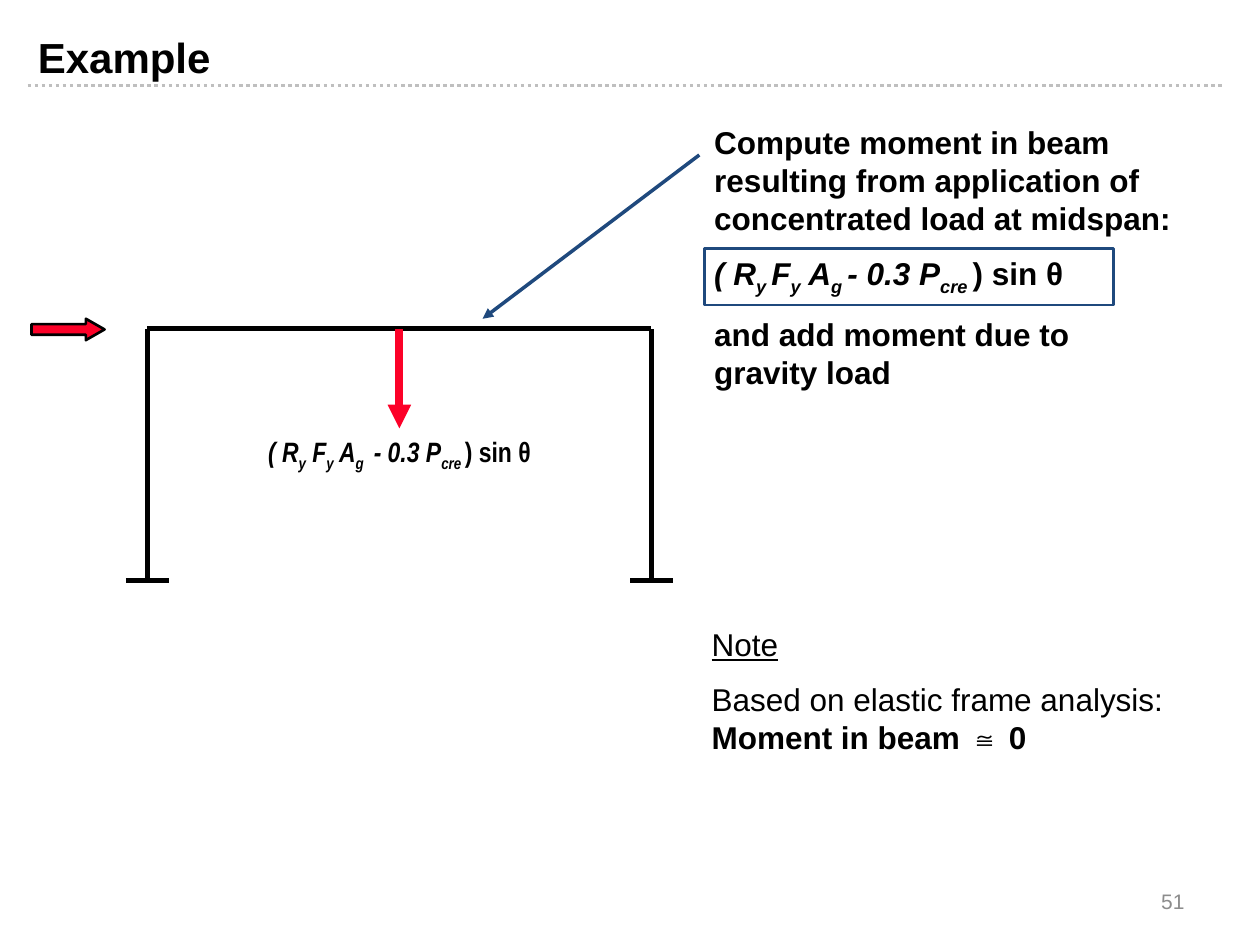
from dataclasses import dataclass

from pptx import Presentation
from pptx.dml.color import RGBColor
from pptx.enum import dml, shapes, text
from pptx.oxml import ns, xmlchemy
from pptx.util import Inches, Pt


@dataclass(frozen=True)
class Theme:
    """Colours, fonts and type sizes of the slide."""
    ink: RGBColor = RGBColor(0, 0, 0)
    load: RGBColor = RGBColor(0xFC, 0x01, 0x28)
    accent: RGBColor = RGBColor(0x1F, 0x49, 0x7D)
    rule: RGBColor = RGBColor(0xBF, 0xBF, 0xBF)
    page: RGBColor = RGBColor(0x8C, 0x8C, 0x8C)
    font: str = "Arial"
    narrow: str = "Arial Narrow"
    title: Pt = Pt(24)
    body: Pt = Pt(18)
    label: Pt = Pt(16)
    footer: Pt = Pt(12)
    gap: Pt = Pt(10)


THEME = Theme()


def style(paragraph, size, bold=None, name=THEME.font, color=THEME.ink):
    """Set the font shared by all runs of a paragraph."""
    font = paragraph.font
    font.size, font.bold, font.name = size, bold, name
    font.color.rgb = color


def add_line(slide, start, end, color, width, arrow=False):
    """Draw a straight line between two points given in inches."""
    line = slide.shapes.add_connector(
        shapes.MSO_CONNECTOR.STRAIGHT, *map(Inches, start + end))
    line.line.color.rgb = color
    line.line.width = Pt(width)
    if arrow:
        tail = xmlchemy.OxmlElement("a:tailEnd")
        tail.set("type", "triangle")
        line.line._get_or_add_ln().append(tail)
    line._element.find(ns.qn("p:spPr")).append(xmlchemy.OxmlElement("a:effectLst"))
    return line


def add_preset(slide, preset, box, line_color, fill=None):
    """Add an outlined preset shape, filled or hollow."""
    shape = slide.shapes.add_shape(preset, *map(Inches, box))
    shape.shadow.inherit = False
    shape.line.color.rgb = line_color
    shape.line.width = Pt(1.5)
    if fill is None:
        shape.fill.background()
    else:
        shape.fill.solid()
        shape.fill.fore_color.rgb = fill
    return shape


def add_text(slide, box):
    """Add a wrapping text box and return its frame."""
    frame = slide.shapes.add_textbox(*map(Inches, box)).text_frame
    frame.word_wrap = True
    return frame


def write_force(paragraph, parts):
    """Write the unbalanced force from alternating base and subscript parts."""
    for index, part in enumerate(parts):
        run = paragraph.add_run()
        run.text = part
        run.font.italic = True
        if index % 2:
            run._r.get_or_add_rPr().set("baseline", "-25000")
    run.font.italic = False


def add_heading(slide, left, top, width, height):
    """Place the title and the dotted rule beneath it."""
    title = slide.shapes.title
    title.left, title.top, title.width, title.height = map(
        Inches, (left, top, width, height))
    frame = title.text_frame
    frame.text = "Example"
    frame.vertical_anchor = text.MSO_ANCHOR.TOP
    frame.paragraphs[0].alignment = text.PP_ALIGN.LEFT
    style(frame.paragraphs[0], THEME.title, True)
    rule = add_line(slide, (0.22, 0.68), (9.72, 0.68), THEME.rule, 2)
    rule.line.dash_style = dml.MSO_LINE.ROUND_DOT


def add_frame(slide, left, top, width, height):
    """Draw the portal frame with its supports, loads and load label."""
    right, base, middle = left + width, top + height, left + width / 2
    add_preset(slide, shapes.MSO_SHAPE.RIGHT_ARROW,
               (left - 0.92, top - 0.08, 0.58, 0.17), THEME.ink, THEME.load
               ).adjustments[1] = 0.875
    for column in (left, right):
        add_line(slide, (column, base), (column, top), THEME.ink, 3)
        add_line(slide, (column - 0.17, base), (column + 0.17, base), THEME.ink, 3)
    add_line(slide, (left, top), (right, top), THEME.ink, 3)
    add_line(slide, (middle, top), (middle, top + 0.79), THEME.load, 4.5, arrow=True)

    label = add_text(slide, (middle - 1.46, top + 0.79, 2.92, 0.37)).paragraphs[0]
    label.alignment = text.PP_ALIGN.CENTER
    style(label, THEME.label, True, THEME.narrow)
    write_force(label, ["( R", "y", " F", "y", " A", "g ", " - 0.3 P", "cre ", ") sin θ"])


def add_moment_steps(slide, left, top, width, height):
    """Explain the beam moment, with its boxed force and pointer."""
    frame = add_text(slide, (left, top, width, height))
    intro, force, gravity = (
        frame.paragraphs[0], frame.add_paragraph(), frame.add_paragraph())
    for paragraph in (intro, force, gravity):
        style(paragraph, THEME.body, True)
    for paragraph in (force, gravity):
        paragraph.space_before = THEME.gap
    intro.add_run().text = ("Compute moment in beam resulting from application of "
                            "concentrated load at midspan:")
    write_force(force, ["( R", "y ", "F", "y", " A", "g ", "- 0.3 P", "cre ", ") sin θ"])
    gravity.add_run().text = "and add moment due to gravity load"
    add_preset(slide, shapes.MSO_SHAPE.RECTANGLE,
               (left + 0.02, top + 1.04, 3.25, 0.45), THEME.accent)
    add_line(slide, (left - 0.02, top + 0.3), (3.83, 2.53), THEME.accent, 2, arrow=True)


def add_note(slide, left, top, width, height):
    """Write the note on elastic frame analysis."""
    frame = add_text(slide, (left, top, width, height))
    heading, finding = frame.paragraphs[0], frame.add_paragraph()
    for paragraph in (heading, finding):
        style(paragraph, THEME.body)
    heading.add_run().text = "Note"
    heading.font.underline = True
    finding.space_before = THEME.gap
    finding.add_run().text = "Based on elastic frame analysis: "
    result = finding.add_run()
    result.text = "Moment in beam ≅ 0"
    result.font.bold = True


def add_page_number(slide, left, top, width, height):
    """Write the page number at the lower right."""
    frame = add_text(slide, (left, top, width, height))
    frame.vertical_anchor = text.MSO_ANCHOR.MIDDLE
    number = frame.paragraphs[0]
    number.alignment = text.PP_ALIGN.RIGHT
    style(number, THEME.footer, color=THEME.page)
    number.add_run().text = "51"


def main():
    """Build and save the slide."""
    deck = Presentation()
    deck.slide_width, deck.slide_height = Inches(10), Inches(7.5)
    slide = deck.slides.add_slide(deck.slide_layouts.get_by_name("Title Only"))
    add_heading(slide, 0.2, 0.2, 8.98, 0.44)
    add_frame(slide, 1.17, 2.61, 4, 2)
    add_moment_steps(slide, 5.57, 0.93, 3.85, 2.22)
    add_note(slide, 5.55, 4.91, 3.9, 1.16)
    add_page_number(slide, 7.17, 6.95, 2.33, 0.4)
    deck.save("out.pptx")


if __name__ == "__main__":
    main()
